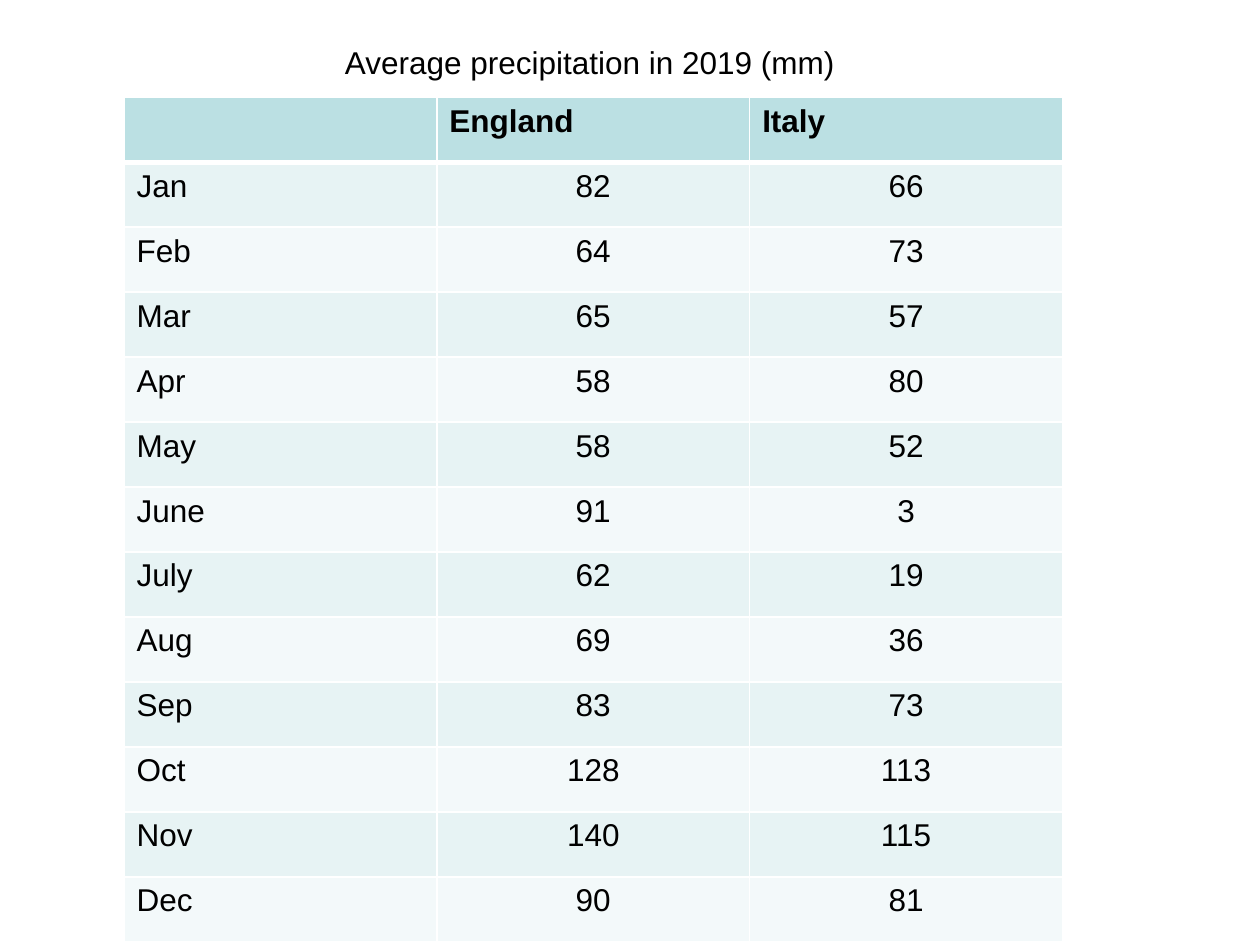
from pptx import Presentation
from pptx.dml.color import RGBColor
from pptx.enum.text import MSO_ANCHOR as Anchor, MSO_AUTO_SIZE as AutoSize, PP_ALIGN as Align
from pptx.oxml import parse_xml
from pptx.oxml.ns import nsdecls
from pptx.util import Cm, Pt

COUNTRIES = ["", "England", "Italy"]
PRECIPITATION = [
    ("Jan", 82, 66),
    ("Feb", 64, 73),
    ("Mar", 65, 57),
    ("Apr", 58, 80),
    ("May", 58, 52),
    ("June", 91, 3),
    ("July", 62, 19),
    ("Aug", 69, 36),
    ("Sep", 83, 73),
    ("Oct", 128, 113),
    ("Nov", 140, 115),
    ("Dec", 90, 81),
]
HEADER_FILL = "BBE0E3"
BAND_FILLS = ["E7F3F4", "F3F9FA"]


def color(hex_code):
    return RGBColor.from_string(hex_code)


def format_text(paragraph, align, bold=False):
    paragraph.alignment = align
    for font in [paragraph.font] + [run.font for run in paragraph.runs]:
        font.name = "Arial"
        font.size = Pt(18)
        font.bold = bold
        font.color.rgb = color("000000")


def set_borders(cell, top, bottom):
    cell_props = cell._tc.get_or_add_tcPr()
    for side, points in (("L", 1), ("R", 1), ("T", top), ("B", bottom)):
        cell_props.append(parse_xml(
            f'<a:ln{side} {nsdecls("a")} w="{Pt(points)}"><a:solidFill>'
            f'<a:srgbClr val="FFFFFF"/></a:solidFill></a:ln{side}>'))


def place_title(slide, left, top, width, height):
    title = slide.shapes.title
    title.left, title.top, title.width, title.height = left, top, width, height
    frame = title.text_frame
    frame.text = "Average precipitation in 2019 (mm)"
    frame.word_wrap = False
    frame.auto_size = AutoSize.SHAPE_TO_FIT_TEXT
    frame.vertical_anchor = Anchor.TOP
    format_text(frame.paragraphs[0], Align.LEFT)


def place_precipitation_table(slide, left, top, width, height):
    rows = [COUNTRIES] + PRECIPITATION
    table = slide.shapes.add_table(
        len(rows), len(COUNTRIES), left, top, width, height).table
    for r, values in enumerate(rows):
        is_header = r == 0
        fill = HEADER_FILL if is_header else BAND_FILLS[(r - 1) % 2]
        for c, value in enumerate(values):
            cell = table.cell(r, c)
            set_borders(cell, 3 if r == 1 else 1, 3 if is_header else 1)
            cell.fill.solid()
            cell.fill.fore_color.rgb = color(fill)
            cell.text_frame.text = str(value)
            align = Align.LEFT if is_header or c == 0 else Align.CENTER
            format_text(cell.text_frame.paragraphs[0], align, is_header)


def main():
    deck = Presentation()
    deck.slide_width, deck.slide_height = Cm(25.4), Cm(19.05)
    slide = deck.slides.add_slide(deck.slide_layouts[5])
    place_precipitation_table(slide, Cm(2.5), Cm(1.96), Cm(18.92), Cm(17.04))
    place_title(slide, Cm(6.7), Cm(0.74), Cm(10.64), Cm(1.02))
    deck.save("out.pptx")


if __name__ == "__main__":
    main()
